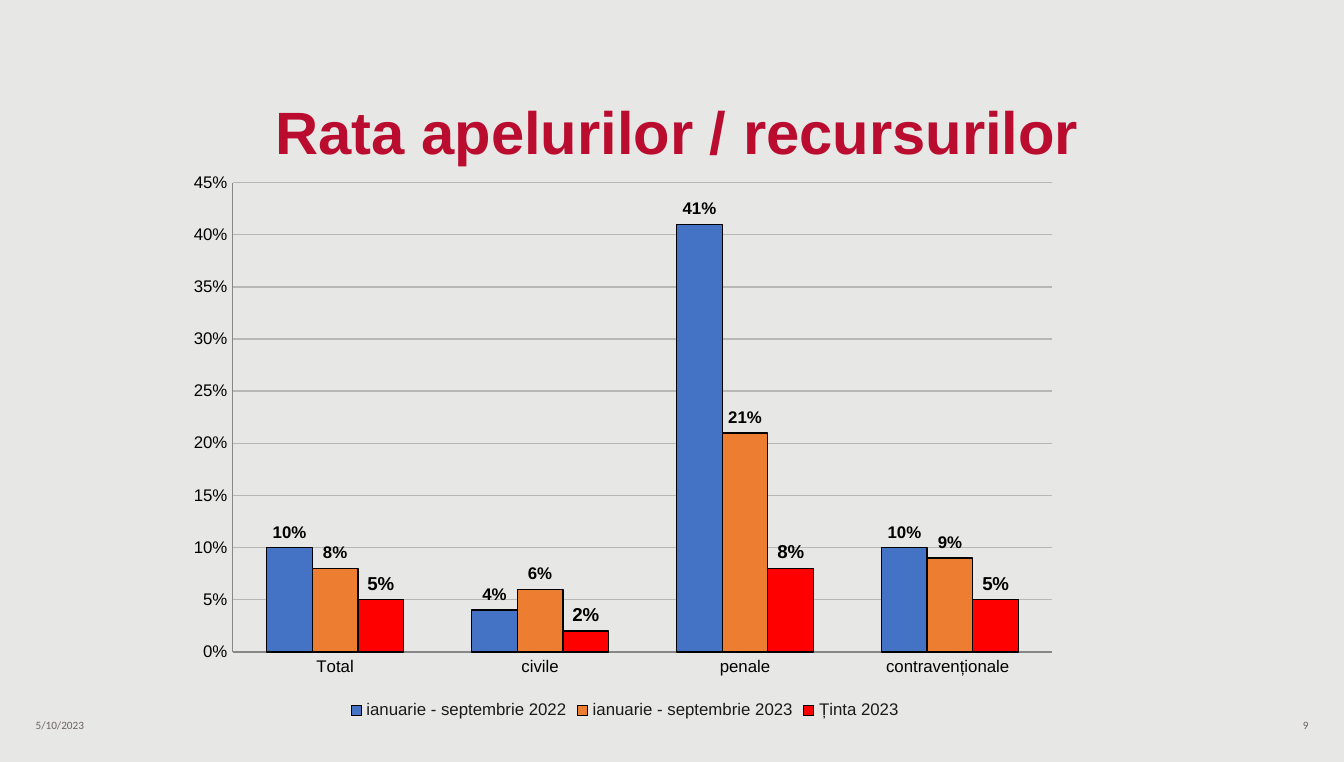
"""Build a slide comparing appeal rates by case type in a clustered column chart."""
from lxml.etree import SubElement
from pptx import Presentation
from pptx.chart.data import CategoryChartData
from pptx.dml.color import RGBColor
from pptx.enum.chart import XL_CHART_TYPE, XL_LABEL_POSITION, XL_LEGEND_POSITION, XL_TICK_MARK
from pptx.enum.text import MSO_ANCHOR, PP_ALIGN
from pptx.oxml.ns import qn
from pptx.util import Pt

TITLE = "Rata apelurilor / recursurilor"
CATEGORIES = ["Total", "civile", "penale", "contravenționale "]
SERIES = [
    ("ianuarie - septembrie 2022", [0.10, 0.04, 0.41, 0.10], "4472C4", 9),
    ("ianuarie - septembrie 2023", [0.08, 0.06, 0.21, 0.09], "ED7D31", 9),
    ("Ținta 2023", [0.05, 0.02, 0.08, 0.05], "FF0000", 10),
]
FOOTERS = [("5/10/2023", PP_ALIGN.LEFT), ("9", PP_ALIGN.RIGHT)]
PLOT_AREA = {"x": 0.06, "y": 0.04, "w": 0.92, "h": 0.83}
THEME = {
    "background": "E7E7E5", "title": "BA0C2F", "footer": "6C6463",
    "text": "000000", "legend": "1A1A1A", "grid": "B7B7B7", "axis": "878787",
    "font": "Arial", "footer_font": "Calibri",
    "title_size": 32, "footer_size": 6, "chart_size": 10, "axis_size": 9,
}
WIDTH, HEIGHT = 720, 408.24
FOOTER_MARGIN, FOOTER_TOP, FOOTER_WIDTH, FOOTER_HEIGHT = 12, 381.6, 168, 14.4


def color(name):
    return RGBColor.from_string(THEME.get(name, name))


def style_font(font, size, fill, face=THEME["font"], bold=False):
    font.size, font.name, font.bold = Pt(size), face, bold
    font.color.rgb = color(fill)


def style_line(line, fill):
    line.color.rgb = color(fill)
    line.width = Pt(0.75)


def write(shape, text, align, anchor, **font):
    frame = shape.text_frame
    frame.word_wrap = True
    frame.vertical_anchor = anchor
    paragraph = frame.paragraphs[0]
    paragraph.alignment, paragraph.line_spacing = align, 0.9
    run = paragraph.add_run()
    run.text = text
    style_font(run.font, **font)


def add_title(slide):
    title = slide.shapes.title
    title.left, title.top, title.width, title.height = Pt(57), Pt(57), Pt(612), Pt(36.5)
    write(title, TITLE, PP_ALIGN.CENTER, MSO_ANCHOR.BOTTOM,
          size=THEME["title_size"], fill="title", bold=True)


def add_footers(slide):
    lefts = (FOOTER_MARGIN, WIDTH - FOOTER_MARGIN - FOOTER_WIDTH)
    for left, (text, align) in zip(lefts, FOOTERS):
        footer = slide.shapes.add_textbox(
            Pt(left), Pt(FOOTER_TOP), Pt(FOOTER_WIDTH), Pt(FOOTER_HEIGHT))
        write(footer, text, align, MSO_ANCHOR.MIDDLE, size=THEME["footer_size"],
              fill="footer", face=THEME["footer_font"])


def place_plot(chart):
    plot_area = chart.plots[0]._element.getparent()
    layout = plot_area.find(qn("c:layout"))
    if layout is None:
        layout = SubElement(plot_area, qn("c:layout"))
        plot_area.insert(0, layout)
    manual = SubElement(layout, qn("c:manualLayout"))
    settings = {"layoutTarget": "inner", "xMode": "edge", "yMode": "edge", **PLOT_AREA}
    for tag, value in settings.items():
        SubElement(manual, qn(f"c:{tag}")).set("val", str(value))


def style_axes(chart):
    for axis in (chart.category_axis, chart.value_axis):
        axis.major_tick_mark = axis.minor_tick_mark = XL_TICK_MARK.NONE
        style_font(axis.tick_labels.font, THEME["axis_size"], "text")
        style_line(axis.format.line, "axis")
    rate_axis = chart.value_axis
    rate_axis.minimum_scale, rate_axis.maximum_scale, rate_axis.major_unit = 0, 0.45, 0.05
    rate_axis.tick_labels.number_format = "0%"
    rate_axis.tick_labels.number_format_is_linked = False
    style_line(rate_axis.major_gridlines.format.line, "grid")


def style_series(plot):
    plot.gap_width, plot.overlap, plot.vary_by_categories = 150, 0, False
    for series, (_, _, fill, label_size) in zip(plot.series, SERIES):
        series.format.fill.solid()
        series.format.fill.fore_color.rgb = color(fill)
        style_line(series.format.line, "text")
        labels = series.data_labels
        labels.show_value = True
        labels.number_format, labels.number_format_is_linked = "0%", False
        labels.position = XL_LABEL_POSITION.OUTSIDE_END
        style_font(labels.font, label_size, "text", bold=True)


def add_rates(slide):
    rates = CategoryChartData(number_format="0%")
    rates.categories = CATEGORIES
    for name, values, _, _ in SERIES:
        rates.add_series(name, values)
    chart = slide.shapes.add_chart(
        XL_CHART_TYPE.COLUMN_CLUSTERED, Pt(96), Pt(85.7), Pt(477.4), Pt(303), rates).chart
    chart.has_title = False
    style_font(chart.font, THEME["chart_size"], "text")
    chart.has_legend = True
    chart.legend.position = XL_LEGEND_POSITION.BOTTOM
    chart.legend.include_in_layout = False
    style_font(chart.legend.font, THEME["axis_size"], "legend")
    style_axes(chart)
    style_series(chart.plots[0])
    place_plot(chart)


def main():
    deck = Presentation()
    deck.slide_width, deck.slide_height = Pt(WIDTH), Pt(HEIGHT)
    slide = deck.slides.add_slide(deck.slide_layouts[5])
    slide.background.fill.solid()
    slide.background.fill.fore_color.rgb = color("background")
    add_footers(slide)
    add_title(slide)
    add_rates(slide)
    deck.save("out.pptx")


if __name__ == "__main__":
    main()
